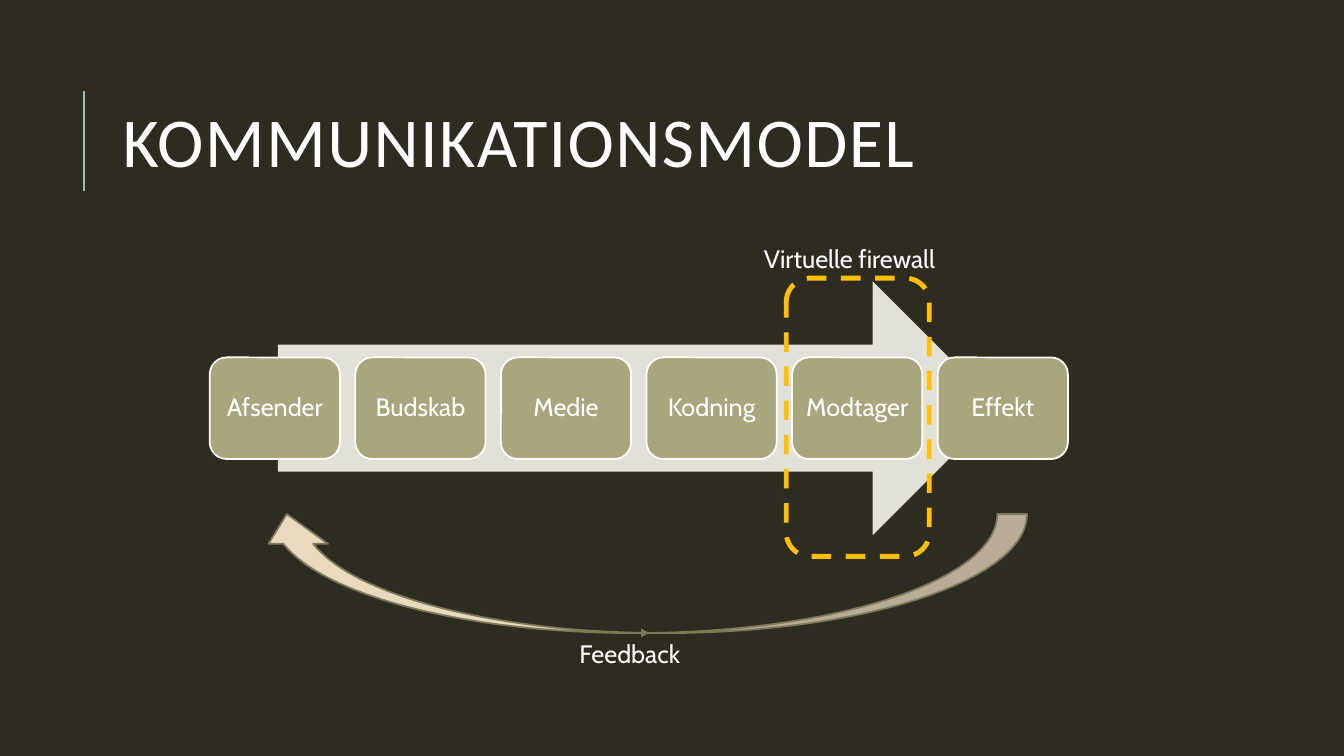
from lxml.etree import SubElement
from pptx import Presentation
from pptx.dml.color import RGBColor
from pptx.enum.dml import MSO_LINE
from pptx.enum.shapes import MSO_CONNECTOR, MSO_SHAPE
from pptx.enum.text import MSO_ANCHOR, PP_ALIGN
from pptx.oxml.ns import qn
from pptx.util import Pt

COLORS = {
    "background": "2E2B21",
    "text": "FFFFFF",
    "accent": "9CBEBD",
    "band": "E2E1D7",
    "step": "A9A57C",
    "feedback": "E9D9BE",
    "feedback_line": "7D7A5C",
    "firewall": "FFC000",
}
STEPS = ["Afsender", "Budskab", "Medie", "Kodning", "Modtager", "Effekt"]


def rgb(name):
    return RGBColor.from_string(COLORS[name])


def add_shape(s, kind, box, fill=None, line=None, width=1.25):
    sp = s.shapes.add_shape(kind, *map(Pt, box))
    sp.shadow.inherit = False
    if fill:
        sp.fill.solid()
        sp.fill.fore_color.rgb = rgb(fill)
    else:
        sp.fill.background()
    if line:
        sp.line.color.rgb = rgb(line)
        sp.line.width = Pt(width)
    else:
        sp.line.fill.background()
    return sp


def write(sp, text, size=18, font="Cabin"):
    tf = sp.text_frame
    tf.word_wrap = True
    p = tf.paragraphs[0]
    r = p.add_run()
    r.text = text
    p.font.size = Pt(size)
    p.font.name = font
    p.font.color.rgb = rgb("text")
    return p


def add_label(s, box, text):
    write(s.shapes.add_textbox(*map(Pt, box)), text)


def add_title(s, box, text):
    x, y, w, h = box
    # Accent rule left of the title
    rule = s.shapes.add_connector(MSO_CONNECTOR.STRAIGHT, Pt(x - 20.8), Pt(y + 90.5),
                                  Pt(x - 20.8), Pt(y + 18.7))
    rule.line.color.rgb = rgb("accent")
    rule.line.width = Pt(1.5)
    SubElement(rule._element.spPr, qn("a:effectLst"))
    # Title text
    sp = s.shapes.add_textbox(*map(Pt, box))
    p = write(sp, text, 50, "Calibri")
    sp.text_frame.vertical_anchor = MSO_ANCHOR.MIDDLE
    p.line_spacing = 0.8
    p.runs[0].font._element.set("spc", "100")


def add_process(s, box):
    x, y, w, h = box
    # Broad arrow behind the steps
    inset = (w - 515.5) / 2
    add_shape(s, MSO_SHAPE.RIGHT_ARROW, (x + inset, y, w - 2 * inset, h), "band")
    # Evenly spaced steps
    step_w, step_h = 93, 72.6
    pitch = (w - step_w) / (len(STEPS) - 1)
    for i, name in enumerate(STEPS):
        step_box = (x + i * pitch, y + (h - step_h) / 2, step_w, step_h)
        sp = add_shape(s, MSO_SHAPE.ROUNDED_RECTANGLE, step_box, "step", "text")
        p = write(sp, name)
        p.alignment = PP_ALIGN.CENTER
        p.line_spacing = 0.9
        tf = sp.text_frame
        tf.vertical_anchor = MSO_ANCHOR.MIDDLE
        tf.margin_left = tf.margin_right = Pt(4)


def add_feedback(s, box):
    x, y, w, h = box
    sp = add_shape(s, MSO_SHAPE.CURVED_UP_ARROW, box, "feedback", "feedback_line")
    sp._element.spPr.find(qn("a:xfrm")).set("flipH", "1")
    SubElement(sp.line._get_or_add_ln(), qn("a:headEnd"), type="triangle")
    add_label(s, (x + 223.2, y + h, 113, 29), "Feedback")


def add_firewall(s, box):
    x, y, w, h = box
    sp = add_shape(s, MSO_SHAPE.ROUNDED_RECTANGLE, box, line="firewall", width=3.5)
    sp.line.dash_style = MSO_LINE.DASH
    add_label(s, (x - 23, y - 28.1, 164, 29), "Virtuelle firewall")


def main():
    prs = Presentation()
    prs.slide_width, prs.slide_height = Pt(960), Pt(540)
    s = prs.slides.add_slide(prs.slide_layouts[6])
    s.background.fill.solid()
    s.background.fill.fore_color.rgb = rgb("background")

    add_title(s, (80.6, 46.1, 765.4, 118), "KOMMUNIKATIONSMODEL")
    add_process(s, (149.8, 200.9, 613, 181.4))
    add_feedback(s, (183.6, 367.2, 550, 85))
    add_firewall(s, (561.6, 198.7, 102.2, 198.7))
    prs.save("out.pptx")


if __name__ == "__main__":
    main()
